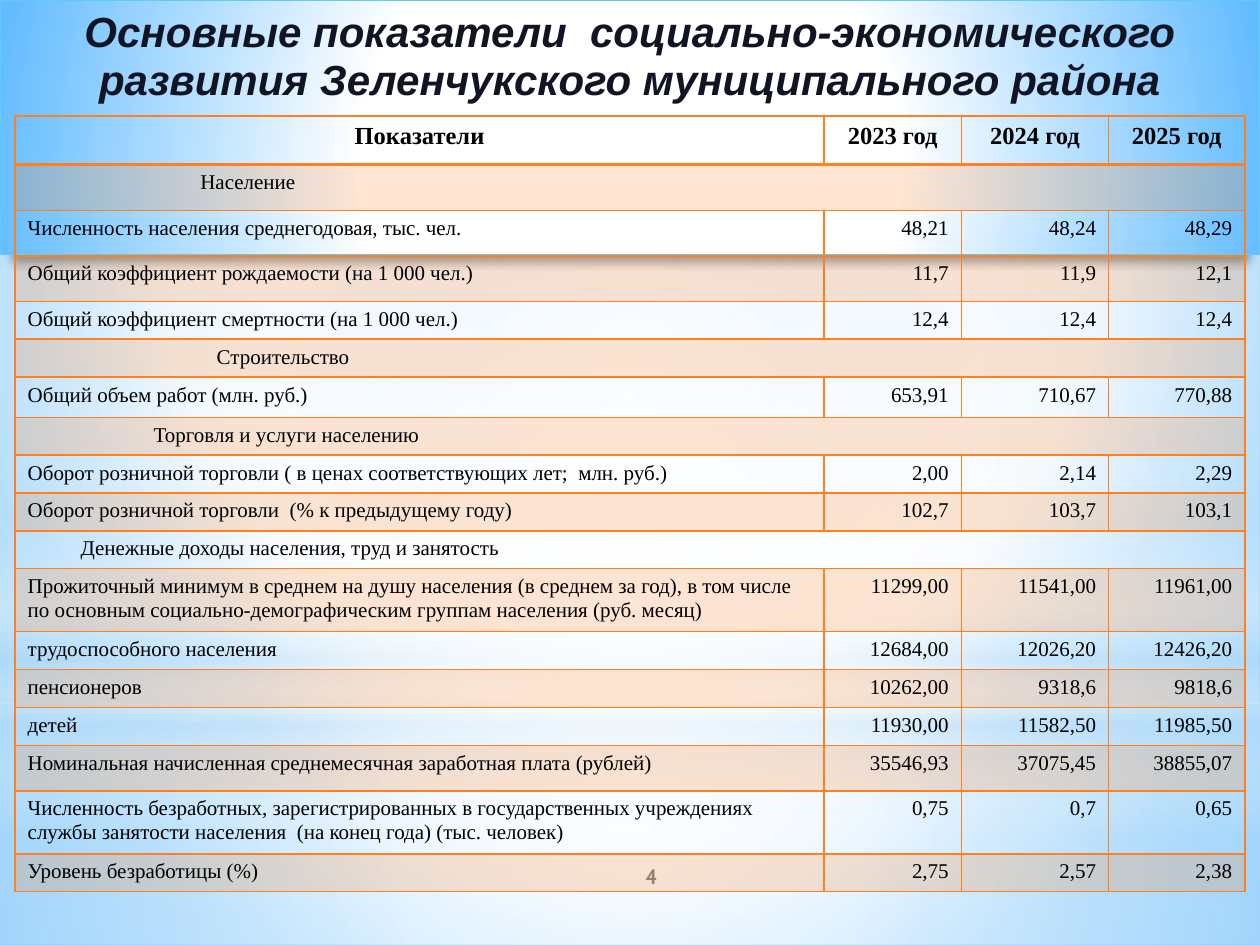
from lxml import etree
from pptx import Presentation
from pptx import util as u
from pptx.dml.color import RGBColor
from pptx.enum import shapes, text
from pptx.oxml import ns

COLORS = {
    "white": "FFFFFF", "pale": "B4DCFA", "sky": "9ED5FF", "blue": "5BB9FF",
    "title_blue": "63BCFF", "title_line": "5ECCF3", "title_text": "111422",
    "number": "808080", "black": "000000", "orange": "FF8021",
}
CENTER = (50, 50, 50, 50)
COLUMN_WIDTHS = [6.42, 1.09, 1.17, 1.08]
HEADER = ("Показатели", "2023 год", "2024 год", "2025 год")
SECTION_INDENTS = {
    "Население": 1.37,
    "Строительство": 1.5,
    "Торговля и услуги населению": 1,
    "Денежные доходы населения, труд и занятость": 0.42,
}
HEADER_ROW, TALL, MEDIUM, LOW, DOUBLE = (points / 72 for points in (28, 26, 23, 21.4, 35.7))
ROWS = [
    (HEADER_ROW, *HEADER),
    (TALL, "Население"),
    (TALL, "Численность населения среднегодовая, тыс. чел.", "48,21", "48,24", "48,29"),
    (TALL, "Общий коэффициент рождаемости (на 1 000 чел.)", "11,7", "11,9", "12,1"),
    (LOW, "Общий коэффициент смертности (на 1 000 чел.)", "12,4", "12,4", "12,4"),
    (LOW, "Строительство"),
    (MEDIUM, "Общий объем работ (млн. руб.)", "653,91", "710,67", "770,88"),
    (LOW, "Торговля и услуги населению"),
    (LOW, "Оборот розничной торговли ( в ценах соответствующих лет;  млн. руб.)",
     "2,00", "2,14", "2,29"),
    (LOW, "Оборот розничной торговли  (% к предыдущему году)", "102,7", "103,7", "103,1"),
    (LOW, "Денежные доходы населения, труд и занятость"),
    (DOUBLE, "Прожиточный минимум в среднем на душу населения (в среднем за год), в том числе "
     "по основным социально-демографическим группам населения (руб. месяц)",
     "11299,00", "11541,00", "11961,00"),
    (LOW, "трудоспособного населения", "12684,00", "12026,20", "12426,20"),
    (LOW, "пенсионеров", "10262,00", "9318,6", "9818,6"),
    (LOW, "детей", "11930,00", "11582,50", "11985,50"),
    (TALL, "Номинальная начисленная среднемесячная заработная плата (рублей)",
     "35546,93", "37075,45", "38855,07"),
    (DOUBLE, "Численность безработных, зарегистрированных в государственных учреждениях "
     "службы занятости населения  (на конец года) (тыс. человек)", "0,75", "0,7", "0,65"),
    (LOW, "Уровень безработицы (%)", "2,75", "2,57", "2,38"),
]


def add_element(parent, tag, **attributes):
    values = {name: str(value) for name, value in attributes.items()}
    return etree.SubElement(parent, ns.qn(tag), values)


def add_color(parent, color, opacity=100):
    element = add_element(parent, "a:srgbClr", val=COLORS[color])
    if opacity < 100:
        add_element(element, "a:alpha", val=opacity * 1000)


def apply_gradient(properties, stops, focus=None):
    old_fill = properties.find(ns.qn("a:solidFill"))
    gradient = etree.Element(ns.qn("a:gradFill"), rotWithShape="1")
    stop_list = add_element(gradient, "a:gsLst")
    for position, *color in stops:
        add_color(add_element(stop_list, "a:gs", pos=position * 1000), *color)
    if focus:
        circle = add_element(gradient, "a:path", path="circle")
        sides = {side: value * 1000 for side, value in zip("ltrb", focus)}
        add_element(circle, "a:fillToRect", **sides)
    else:
        add_element(gradient, "a:lin", ang=90 * 60000, scaled=0)
    properties.replace(old_fill, gradient)


def add_gradient_shape(slide, kind, box, stops, focus=None):
    shape = slide.shapes.add_shape(kind, *map(u.Inches, box))
    shape.shadow.inherit = False
    shape.line.fill.background()
    shape.fill.solid()
    apply_gradient(shape._element.spPr, stops, focus)
    return shape


def write_text(frame, content, *, size, font, color, bold=False, italic=False,
               align=text.PP_ALIGN.LEFT, indent=0, line_spacing=None):
    frame.word_wrap = True
    paragraph = frame.paragraphs[0]
    paragraph.alignment = align
    paragraph.line_spacing = line_spacing
    if indent:
        paragraph._p.get_or_add_pPr().set("marL", str(u.Inches(indent)))
    run = paragraph.add_run()
    run.text = content
    run.font.size = u.Pt(size)
    run.font.name = font
    run.font.bold = bold
    run.font.italic = italic
    run.font.color.rgb = RGBColor.from_string(COLORS[color])


def add_background(slide):
    slide.background.fill.solid()
    properties = slide._element.find(".//" + ns.qn("p:bgPr"))
    apply_gradient(properties, [(0, "sky"), (60, "white"), (100, "blue")], (20, 10, 20, 60))
    rectangle, oval = shapes.MSO_SHAPE.RECTANGLE, shapes.MSO_SHAPE.OVAL
    add_gradient_shape(slide, rectangle, (0, 5.58, 10, 1.92),
                       [(0, "white", 91), (37, "white", 76), (100, "pale", 79)], CENTER)
    add_gradient_shape(slide, rectangle, (0, 0, 10, 5.58),
                       [(0, "white", 89), (48, "white", 62), (100, "pale", 79)], CENTER)
    add_gradient_shape(slide, rectangle, (0, 4.12, 10, 2.5),
                       [(0, "white", 0), (29, "white", 30), (45, "pale", 40),
                        (55, "white", 26), (65, "pale", 60), (100, "white", 0)])
    add_gradient_shape(slide, oval, (0, 1.75, 10, 5.58),
                       [(0, "white"), (56, "white", 0)], CENTER)


def add_slide_number(slide):
    box = slide.shapes.add_textbox(*map(u.Inches, (4.17, 6.75, 2, 0.4)))
    box.text_frame.vertical_anchor = text.MSO_ANCHOR.MIDDLE
    write_text(box.text_frame, "4", size=12, font="Cabin", color="number", bold=True,
               align=text.PP_ALIGN.CENTER)


def add_title(slide):
    shape = add_gradient_shape(slide, shapes.MSO_SHAPE.RECTANGLE, (0, 0, 10, 2.02),
                               [(0, "white"), (42, "white"), (100, "title_blue")],
                               (24, 44, 24, 12))
    shape.line.color.rgb = RGBColor.from_string(COLORS["title_line"])
    shape.line.width = u.Pt(0.75)
    effects = shape._element.spPr.find(ns.qn("a:effectLst"))
    shadow = add_element(effects, "a:outerShdw", blurRad=u.Inches(0.08), dist=u.Inches(0.04),
                         dir=90 * 60000, sx=98000, algn="b", rotWithShape=0)
    add_color(shadow, "black", 40)
    shape.text_frame.vertical_anchor = text.MSO_ANCHOR.TOP
    shape.text_frame.margin_top = u.Inches(0.07)
    write_text(shape.text_frame, "Основные показатели  социально-экономического "
               "развития Зеленчукского муниципального района", size=24, font="Arial",
               color="title_text", bold=True, italic=True, align=text.PP_ALIGN.CENTER,
               line_spacing=0.96)


def format_cell(cell, row_index):
    properties = cell._tc.get_or_add_tcPr()
    for side in "LRTB":
        header_edge = (row_index, side) in ((0, "B"), (1, "T"))
        line = add_element(properties, f"a:ln{side}", w=u.Pt(2 if header_edge else 1))
        add_color(add_element(line, "a:solidFill"), "orange")
    if row_index % 2:
        add_color(add_element(properties, "a:solidFill"), "orange", 20)
    else:
        cell.fill.background()


def add_indicator_table(slide):
    frame = slide.shapes.add_table(len(ROWS), len(COLUMN_WIDTHS),
                                   *map(u.Inches, (0.12, 0.92, 9.76, 6.16)))
    table = frame.table
    table.first_row = table.horz_banding = False
    for column, width in zip(table.columns, COLUMN_WIDTHS):
        column.width = u.Inches(width)
    for row_index, (height, *values) in enumerate(ROWS):
        row = table.rows[row_index]
        row.height = u.Inches(height)
        for cell in row.cells:
            format_cell(cell, row_index)
        is_header = row_index == 0
        if len(values) == 1:
            row.cells[0].merge(row.cells[len(COLUMN_WIDTHS) - 1])
        for column_index, value in enumerate(values):
            align = text.PP_ALIGN.RIGHT if column_index else text.PP_ALIGN.LEFT
            write_text(row.cells[column_index].text_frame, value,
                       size=14 if is_header else 12, font="Times New Roman",
                       color="black", bold=is_header,
                       align=text.PP_ALIGN.CENTER if is_header else align,
                       indent=SECTION_INDENTS.get(value, 0))


def main():
    presentation = Presentation()
    presentation.slide_width = u.Inches(10)
    presentation.slide_height = u.Inches(7.5)
    slide = presentation.slides.add_slide(presentation.slide_layouts[6])
    add_background(slide)
    add_slide_number(slide)
    add_title(slide)
    add_indicator_table(slide)
    presentation.save("out.pptx")


if __name__ == "__main__":
    main()
